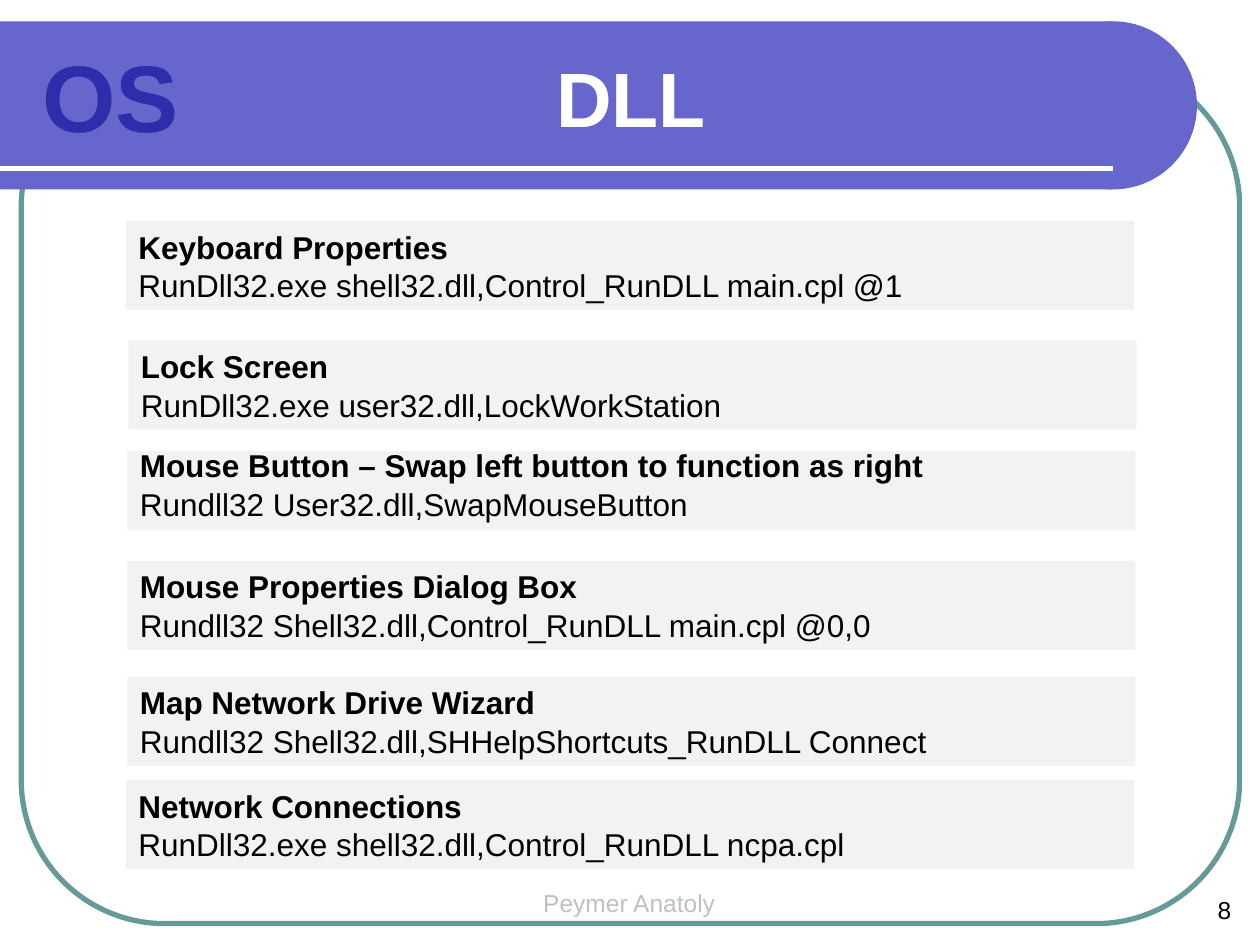
import pptx
import pptx.util
import pptx.dml.color
import pptx.enum.shapes
import pptx.enum.text
import pptx.oxml.ns
from lxml import etree
from pptx.util import Cm, Pt

COLORS = {"banner": "6666CC", "frame": "669999", "panel": "F2F2F2", "logo": "2E2EAA",
          "white": "FFFFFF", "text": "000000", "footer": "C0C0C0"}
ALIGN = pptx.enum.text.PP_ALIGN
SHAPE = pptx.enum.shapes.MSO_SHAPE

# heading, command, left and top in cm
COMMANDS = [
    ("Keyboard Properties", "RunDll32.exe shell32.dll,Control_RunDLL main.cpl @1", 2.54, 4.45),
    ("Lock Screen", "RunDll32.exe user32.dll,LockWorkStation", 2.59, 6.86),
    ("Mouse Button – Swap left button to function as right",
     "Rundll32 User32.dll,SwapMouseButton", 2.57, 9.09),
    ("Mouse Properties Dialog Box",
     "Rundll32 Shell32.dll,Control_RunDLL main.cpl @0,0", 2.57, 11.3),
    ("Map Network Drive Wizard",
     "Rundll32 Shell32.dll,SHHelpShortcuts_RunDLL Connect", 2.57, 13.64),
    ("Network Connections", "RunDll32.exe shell32.dll,Control_RunDLL ncpa.cpl", 2.54, 15.72),
]
TIGHT_ROW = 2

# text, box in cm, size, colour, bold, alignment
LABELS = [
    ("Peymer Anatoly", (10.36, 17.78, 4.65, 0.89), 14, "footer", False, ALIGN.CENTER),
    ("8", (23.37, 17.91, 1.7, 0.84), 14, "text", False, ALIGN.RIGHT),
    ("OS", (0.43, 0.64, 3.61, 2.57), 54, "logo", True, ALIGN.CENTER),
]


def rgb(name):
    return pptx.dml.color.RGBColor.from_string(COLORS[name])


def style(paragraph, size, color, bold, align):
    paragraph.alignment = align
    font = paragraph.font
    font.name, font.size, font.bold = "Arial", Pt(size), bold
    font.color.rgb = rgb(color)


def add_shape(slide, kind, box, fill=None):
    shape = slide.shapes.add_shape(kind, *map(Cm, box))
    shape.shadow.inherit = False
    shape.line.fill.background()
    if fill:
        shape.fill.solid()
        shape.fill.fore_color.rgb = rgb(fill)
    else:
        shape.fill.background()
    return shape


def add_decor(slide):
    frame = add_shape(slide, SHAPE.ROUNDED_RECTANGLE, (0.43, 1.27, 24.56, 17.35))
    frame.line.color.rgb = rgb("frame")
    frame.line.width = Pt(3)
    add_shape(slide, SHAPE.RECTANGLE, (0, 0.43, 22.43, 3.39), "banner")
    add_shape(slide, SHAPE.OVAL, (20.74, 0.43, 3.39, 3.39), "banner")
    rule = slide.shapes.add_connector(pptx.enum.shapes.MSO_CONNECTOR.STRAIGHT,
                                      Cm(0), Cm(3.39), Cm(22.43), Cm(3.39))
    rule.line.color.rgb = rgb("white")
    rule.line.width = Pt(3)
    etree.SubElement(rule.element.spPr, pptx.oxml.ns.qn("a:effectLst"))


def add_title(slide, text):
    title = slide.shapes.title
    title.left, title.top, title.width, title.height = map(Cm, (8.28, 0.43, 8.89, 3.05))
    title.text_frame.text = text
    title.text_frame.word_wrap = False
    title.text_frame.vertical_anchor = pptx.enum.text.MSO_ANCHOR.MIDDLE
    style(title.text_frame.paragraphs[0], 44, "white", True, ALIGN.CENTER)
    slide.shapes.element.append(title.element)  # bring in front of the banner


def add_label(slide, text, box, *look):
    label = slide.shapes.add_textbox(*map(Cm, box)).text_frame
    label.word_wrap = True
    label.text = text
    style(label.paragraphs[0], *look)


def add_command(slide, heading, command, left, top, tight):
    panel = add_shape(slide, SHAPE.RECTANGLE, (left, top, 20.32, 1.6 if tight else 1.8), "panel")
    frame = panel.text_frame
    frame.vertical_anchor = pptx.enum.text.MSO_ANCHOR.TOP
    frame.text = f"{heading}\n{command}"
    for paragraph, bold in zip(frame.paragraphs, (True, False)):
        style(paragraph, 18, "text", bold, ALIGN.JUSTIFY if tight else ALIGN.LEFT)
        paragraph.line_spacing = Pt(15 if tight else 22)
        paragraph.space_after = Pt(7.5 if tight else 0)


def main():
    deck = pptx.Presentation()
    deck.slide_width, deck.slide_height = Cm(25.4), Cm(19.05)
    slide = deck.slides.add_slide(deck.slide_layouts.get_by_name("Title Only"))
    add_decor(slide)
    add_title(slide, "DLL")
    for label in LABELS:
        add_label(slide, *label)
    for row, command in enumerate(COMMANDS):
        add_command(slide, *command, row == TIGHT_ROW)
    deck.save("out.pptx")


if __name__ == "__main__":
    main()
